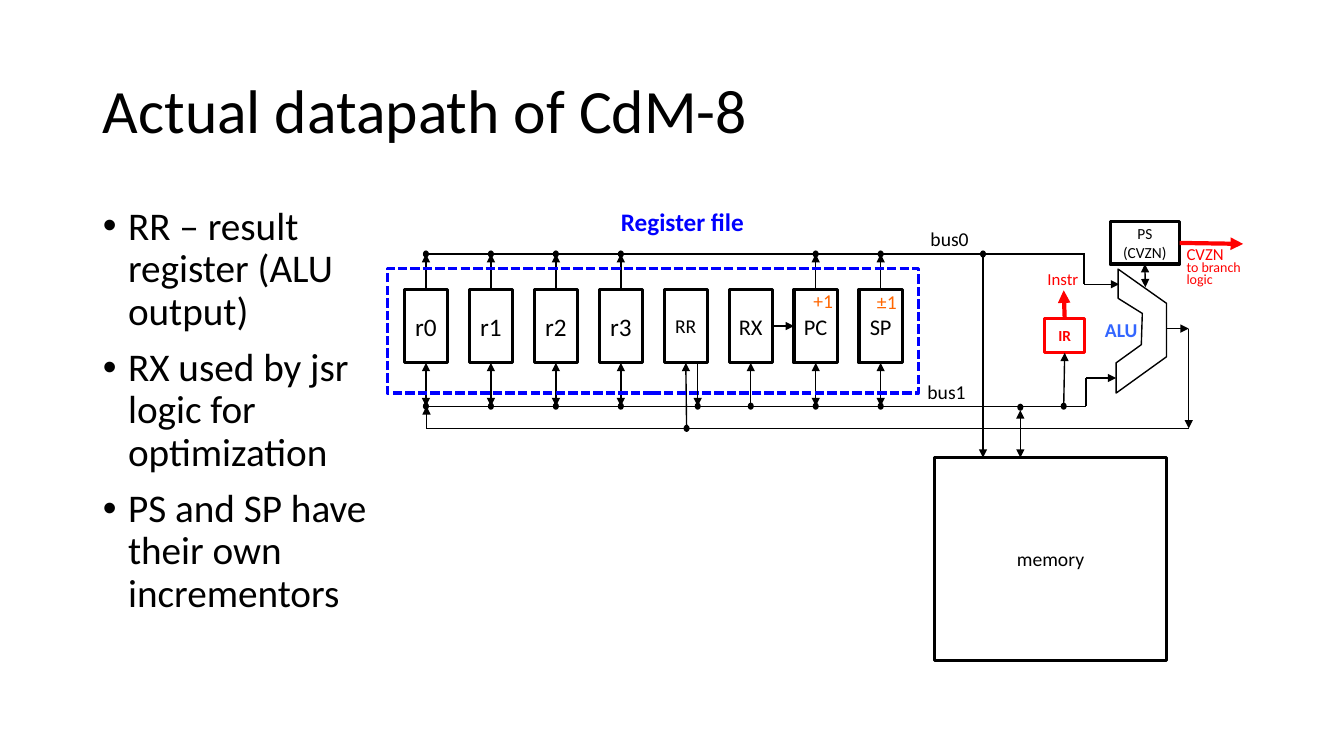
from lxml import etree
from pptx import Presentation
from pptx.dml.color import RGBColor
from pptx.enum.dml import MSO_LINE
from pptx.enum.shapes import MSO_CONNECTOR, MSO_SHAPE
from pptx.enum.text import MSO_ANCHOR, MSO_AUTO_SIZE, PP_ALIGN
from pptx.oxml.ns import qn
from pptx.util import Inches, Pt

STRAIGHT = MSO_CONNECTOR.STRAIGHT
RECTANGLE, OVAL = MSO_SHAPE.RECTANGLE, MSO_SHAPE.OVAL
LEFT, CENTER = PP_ALIGN.LEFT, PP_ALIGN.CENTER
TOP_SIDE, LEFT_SIDE, BOTTOM_SIDE, RIGHT_SIDE = range(4)
BLACK, RED, BLUE = "000000", "FF0000", "0000FF"

TITLE = "Actual datapath of CdM-8"
BULLETS = [
    "RR – result register (ALU output)",
    "RX used by jsr logic for optimization",
    "PS and SP have their own incrementors",
]

# name, text size, arrow to bus0, arrowheads on the link to bus1 (None: no link)
REGISTERS = [
    ("r0", 18, True, "both"),
    ("r1", 18, True, "both"),
    ("r2", 18, True, "both"),
    ("r3", 18, True, "both"),
    ("RR", 14, False, None),
    ("RX", 16, False, "start"),
    ("PC", 16, True, "both"),
    ("SP", 16, True, "both"),
]
REGISTER_LEFT, REGISTER_TOP = 4.01, 2.87
REGISTER_WIDTH, REGISTER_HEIGHT = 0.43, 0.73
REGISTER_PITCH = (8.52 - REGISTER_LEFT) / 7

BUS0, BUS1, RESULT_BUS = 2.52, 4.03, 4.25
ALU_OUTLINE = [(11.09, 2.67), (11.57, 3.01), (11.57, 3.54), (11.07, 3.9),
               (11.07, 3.6), (11.32, 3.42), (11.33, 3.11), (11.09, 2.96)]

# start point, end point, arrowheads
WIRES = [
    ((4.2, BUS0), (10.76, BUS0), None),
    ((4.2, BUS1), (10.77, BUS1), None),
    ((10.75, BUS0), (10.75, 2.82), None),
    ((10.75, 2.82), (11.1, 2.82), "end"),
    ((10.77, BUS1), (10.77, 3.75), None),
    ((10.77, 3.75), (11.07, 3.75), "end"),
    ((11.57, 3.26), (11.79, 3.26), "end"),
    ((11.79, 3.26), (11.79, RESULT_BUS), "end"),
    ((11.79, RESULT_BUS), (4.23, RESULT_BUS), None),
    ((4.23, RESULT_BUS), (4.23, BUS1), "end"),
    ((6.92, 3.6), (6.92, BUS1), "end"),
    ((9.75, BUS0), (9.75, 4.54), "end"),
    ((10.12, 4.07), (10.12, 4.54), "both"),
]
JUNCTIONS = [(6.92, BUS1), (6.81, RESULT_BUS), (9.75, BUS0), (10.12, 4.04), (10.55, BUS1)]

# lines, box, sizes, colour, bold, line spacing
LABELS = [
    (["Register file"], (6.06, 2, 1.44, 0.4), [18], BLUE, True, 1),
    (["bus0"], (9.13, 2.2, 0.58, 0.34), [14], BLACK, False, 1),
    (["bus1"], (9.1, 3.72, 0.58, 0.34), [14], BLACK, False, 1),
    (["ALU"], (10.86, 3.1, 0.55, 0.34), [14], "3366FF", True, 1),
    (["+1"], (7.97, 2.82, 0.4, 0.34), [14], "FF6600", False, 1),
    (["±1"], (8.6, 2.83, 0.4, 0.34), [14], "FF6600", False, 1),
    (["Instr"], (10.29, 2.62, 0.51, 0.3), [12], RED, False, 1),
    (["CVZN", "to branch\nlogic"], (11.67, 2.42, 0.75, 0.49), [12, 10], RED, False, 0.7),
]


def rgb(color):
    return RGBColor.from_string(color)


def write(frame, lines, sizes, color=BLACK, bold=False, align=LEFT, spacing=1, before=0):
    for index, line in enumerate(lines):
        paragraph = frame.paragraphs[0] if index == 0 else frame.add_paragraph()
        paragraph.text = line
        paragraph.alignment = align
        paragraph.line_spacing = spacing
        paragraph.space_before = Pt(before)
        for run in paragraph.runs:
            run.font.name = "Calibri"
            run.font.size = Pt(sizes[min(index, len(sizes) - 1)])
            run.font.bold = bold
            run.font.color.rgb = rgb(color)


def place(shape, left, top, width, height):
    shape.left, shape.top = Inches(left), Inches(top)
    shape.width, shape.height = Inches(width), Inches(height)


def add_box(slide, box, lines=(), size=14, color=BLACK, line_color=BLACK, bold=False):
    shape = slide.shapes.add_shape(RECTANGLE, *map(Inches, box))
    outline(shape, line_color, 2.25)
    shape.text_frame.word_wrap = False
    shape.text_frame.vertical_anchor = MSO_ANCHOR.MIDDLE
    write(shape.text_frame, lines, [size], color, bold, CENTER)
    return shape


def outline(shape, color, width):
    shape.shadow.inherit = False
    shape.fill.background()
    shape.line.color.rgb = rgb(color)
    shape.line.width = Pt(width)


def add_dot(slide, x, y):
    dot = slide.shapes.add_shape(OVAL, Inches(x - 0.03), Inches(y - 0.035),
                                 Inches(0.06), Inches(0.07))
    dot.shadow.inherit = False
    dot.fill.solid()
    dot.fill.fore_color.rgb = rgb(BLACK)
    dot.line.fill.background()


def add_wire(slide, start, end, heads=None, color=BLACK, width=1, source=None, target=None):
    """Draw a wire; source and target are (shape, side) pairs to join it to."""
    wire = slide.shapes.add_connector(STRAIGHT, *map(Inches, (*start, *end)))
    wire.line.color.rgb = rgb(color)
    wire.line.width = Pt(width)
    line = wire.line._get_or_add_ln()
    for tag, position in (("a:headEnd", "start"), ("a:tailEnd", "end")):
        if heads in (position, "both"):
            etree.SubElement(line, qn(tag), type="triangle")
    etree.SubElement(wire._element.spPr, qn("a:effectLst"))
    if source:
        wire.begin_connect(*source)
    if target:
        wire.end_connect(*target)


def add_registers(slide):
    boxes = {}
    bottom = REGISTER_TOP + REGISTER_HEIGHT
    for index, (name, size, to_bus0, bus1_heads) in enumerate(REGISTERS):
        left = REGISTER_LEFT + index * REGISTER_PITCH
        middle = left + REGISTER_WIDTH / 2
        box = add_box(slide, (left, REGISTER_TOP, REGISTER_WIDTH, REGISTER_HEIGHT), [name], size)
        boxes[name] = box
        if to_bus0:
            add_wire(slide, (middle, REGISTER_TOP), (middle, BUS0), "end", source=(box, TOP_SIDE))
            add_dot(slide, middle, BUS0)
        if bus1_heads:
            add_wire(slide, (middle, bottom), (middle, BUS1), bus1_heads,
                     source=(box, BOTTOM_SIDE))
            add_dot(slide, middle, BUS1)
    add_wire(slide, (6.81, bottom), (6.81, RESULT_BUS), "start", source=(boxes["RR"], BOTTOM_SIDE))
    add_wire(slide, (7.67, 3.24), (7.87, 3.24), "end",
             source=(boxes["RX"], RIGHT_SIDE), target=(boxes["PC"], LEFT_SIDE))


def add_alu(slide):
    builder = slide.shapes.build_freeform(*map(Inches, ALU_OUTLINE[0]))
    builder.add_line_segments([tuple(map(Inches, point)) for point in ALU_OUTLINE[1:]])
    outline(builder.convert_to_shape(), BLACK, 1)


def add_text(slide):
    title, body = slide.placeholders
    place(title, 0.92, 0.4, 11.5, 1.45)
    place(body, 0.92, 2, 2.82, 4.76)
    title.text_frame.vertical_anchor = MSO_ANCHOR.MIDDLE
    write(title.text_frame, [TITLE], [44], spacing=0.9)
    write(body.text_frame, BULLETS, [28], spacing=0.9, before=10)
    for frame in (title.text_frame, body.text_frame):
        frame.auto_size = MSO_AUTO_SIZE.NONE
    for paragraph in body.text_frame.paragraphs:
        properties = paragraph._p.get_or_add_pPr()
        properties.set("marL", str(Inches(0.25)))
        properties.set("indent", str(Inches(-0.25)))


def main():
    presentation = Presentation()
    presentation.slide_width, presentation.slide_height = Inches(13.33), Inches(7.5)
    slide = presentation.slides.add_slide(presentation.slide_layouts[1])
    add_text(slide)
    add_registers(slide)
    register_file = add_box(slide, (3.84, 2.66, 5.27, 1.24), line_color=BLUE)
    register_file.line.dash_style = MSO_LINE.SQUARE_DOT
    add_alu(slide)
    add_box(slide, (9.27, 4.54, 2.3, 2.01), ["memory"])
    instruction = add_box(slide, (10.36, 3.16, 0.4, 0.34), ["IR"], 11, RED, RED, True)
    status = add_box(slide, (11.01, 2.2, 0.69, 0.42), ["PS", "(CVZN)"], 11)
    for start, end, heads in WIRES:
        add_wire(slide, start, end, heads)
    add_wire(slide, (10.55, 3.5), (10.55, BUS1), "start", source=(instruction, BOTTOM_SIDE))
    add_wire(slide, (10.55, 3.16), (10.55, 2.88), "end", RED, 3, source=(instruction, TOP_SIDE))
    add_wire(slide, (11.36, 2.62), (11.36, 2.85), "both", source=(status, BOTTOM_SIDE))
    add_wire(slide, (11.7, 2.41), (12.33, 2.42), "end", RED, 3, source=(status, RIGHT_SIDE))
    for x, y in JUNCTIONS:
        add_dot(slide, x, y)
    for lines, box, sizes, color, bold, spacing in LABELS:
        frame = slide.shapes.add_textbox(*map(Inches, box)).text_frame
        frame.word_wrap = False
        write(frame, lines, sizes, color, bold, spacing=spacing)
    presentation.save("out.pptx")


if __name__ == "__main__":
    main()
